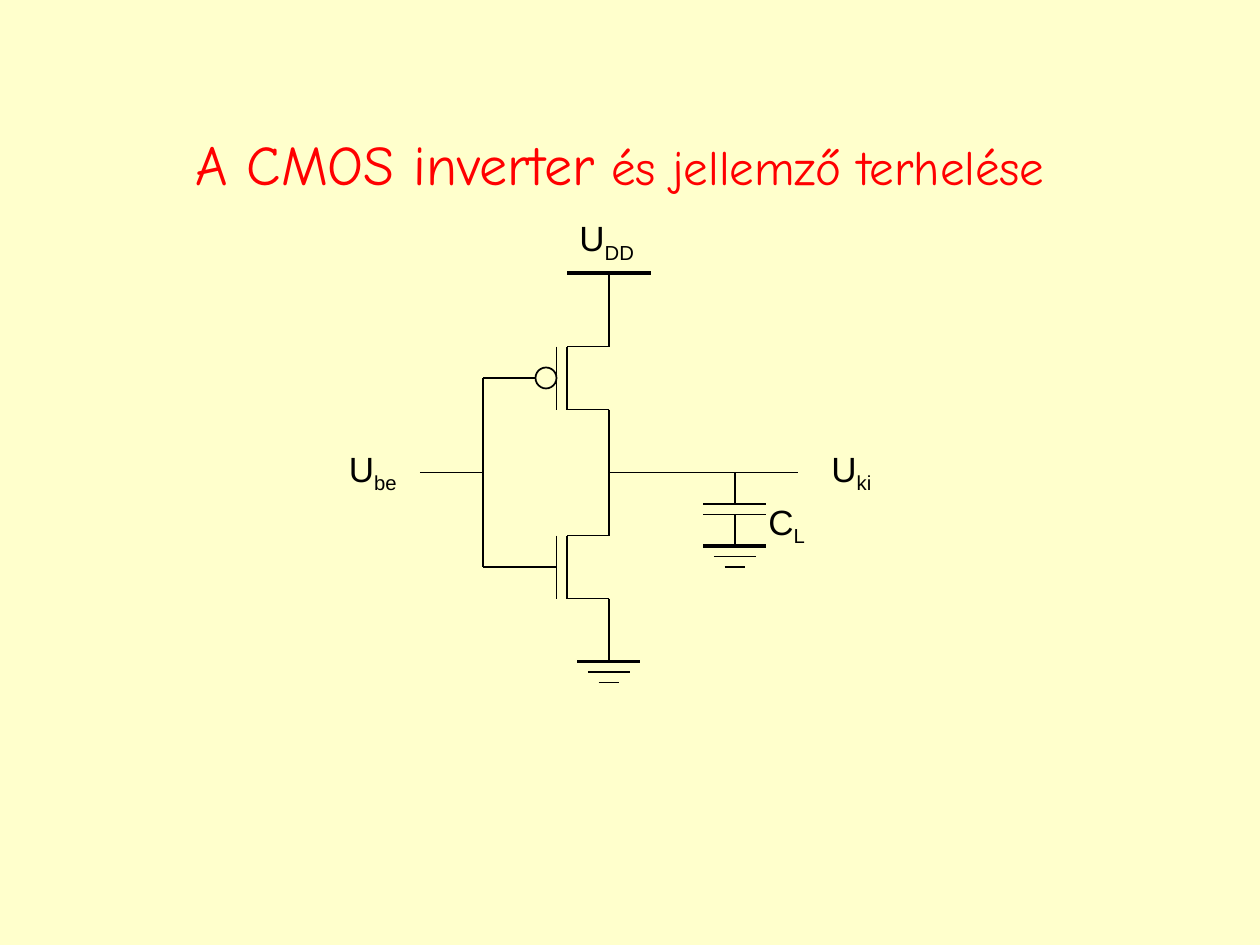
from dataclasses import dataclass

from lxml import etree
from pptx import Presentation
from pptx import util as u
from pptx.dml.color import RGBColor
from pptx.enum import shapes, text
from pptx.oxml.ns import qn


@dataclass(frozen=True)
class Theme:
    background: RGBColor = RGBColor(0xFF, 0xFF, 0xCC)
    heading: RGBColor = RGBColor(0xFF, 0, 0)
    ink: RGBColor = RGBColor(0, 0, 0)
    heading_font: str = "Comic Neue"
    label_font: str = "Arial"
    heading_size: int = 32
    subheading_size: int = 28
    label_size: int = 20
    wire: float = 1
    rail: float = 2.25


@dataclass(frozen=True)
class Label:
    symbol: str
    index: str
    left: float
    top: float
    width: float


@dataclass(frozen=True)
class Wire:
    """Straight line between two points, in twelfths of an inch."""
    x1: float
    y1: float
    x2: float
    y2: float
    weight: float = Theme.wire


THEME = Theme()
CHANNEL_X, DRAIN_X = 54, 58
INPUT_X, LOAD_X = 46, 70
PMOS_Y, NMOS_Y, MIDDLE_Y = 36, 54, 45
SUPPLY_Y, GROUND_Y = 26, 63

LABELS = [
    Label("U", "DD", 4.5, 1.67, 0.66),
    Label("U", "ki", 6.5, 3.5, 0.53),
    Label("C", "L", 6, 3.92, 0.5),
    Label("U", "be", 2.67, 3.5, 0.6),
]


def grid(steps: float) -> u.Length:
    return u.Inches(steps / 12)


def bar(x: float, y: float, half: float, weight: float = THEME.wire) -> Wire:
    return Wire(x - half, y, x + half, y, weight)


def ground(x: float, y: float) -> list[Wire]:
    return [bar(x, y, 3, THEME.rail), bar(x, y + 1, 2), bar(x, y + 2, 1)]


def transistor(y: float) -> list[Wire]:
    top, bottom = y - 3, y + 3
    return [
        Wire(CHANNEL_X, top, DRAIN_X, top),
        Wire(CHANNEL_X, bottom, DRAIN_X, bottom),
        Wire(CHANNEL_X, top, CHANNEL_X, bottom),
        Wire(CHANNEL_X - 1, top, CHANNEL_X - 1, bottom),
    ]


def draw_wire(circuit, wire: Wire) -> None:
    line = circuit.shapes.add_connector(
        shapes.MSO_CONNECTOR.STRAIGHT,
        grid(wire.x1), grid(wire.y1), grid(wire.x2), grid(wire.y2))
    line.line.color.rgb = THEME.ink
    line.line.width = u.Pt(wire.weight)
    etree.SubElement(line._element.spPr, qn("a:effectLst"))


def draw_label(circuit, label: Label) -> None:
    box = circuit.shapes.add_textbox(
        u.Inches(label.left), u.Inches(label.top),
        u.Inches(label.width), u.Inches(0.43))
    frame = box.text_frame
    frame.word_wrap = False
    frame.auto_size = text.MSO_AUTO_SIZE.SHAPE_TO_FIT_TEXT
    paragraph = frame.paragraphs[0]
    paragraph.font.name = THEME.label_font
    paragraph.font.size = u.Pt(THEME.label_size)
    paragraph.font.color.rgb = THEME.ink
    paragraph.add_run().text = label.symbol
    index = paragraph.add_run()
    index.text = label.index
    index._r.get_or_add_rPr().set("baseline", "-25000")


def draw_inversion_bubble(circuit) -> None:
    bubble = circuit.shapes.add_shape(
        shapes.MSO_SHAPE.OVAL, grid(51), grid(PMOS_Y - 1), grid(2), grid(2))
    bubble.shadow.inherit = False
    bubble.fill.background()
    bubble.line.color.rgb = THEME.ink
    bubble.line.width = u.Pt(THEME.wire)


def draw_title(slide) -> None:
    title = slide.shapes.title
    title.left, title.top = u.Inches(0.75), u.Inches(0.67)
    title.width, title.height = u.Inches(8.34), u.Inches(1.25)
    title.text_frame.vertical_anchor = text.MSO_ANCHOR.MIDDLE
    heading = title.text_frame.paragraphs[0]
    heading.alignment = text.PP_ALIGN.CENTER
    heading.font.name = THEME.heading_font
    heading.font.color.rgb = THEME.heading
    for words, size in [("A CMOS inverter", THEME.heading_size),
                        (" és jellemző terhelése", THEME.subheading_size)]:
        run = heading.add_run()
        run.text = words
        run.font.size = u.Pt(size)


def main() -> None:
    deck = Presentation()
    deck.slide_width, deck.slide_height = u.Inches(10), u.Inches(7.5)
    slide = deck.slides.add_slide(deck.slide_layouts[5])
    slide.background.fill.solid()
    slide.background.fill.fore_color.rgb = THEME.background
    draw_title(slide)

    wires = [
        # Supply rail, output branch and ground
        Wire(CHANNEL_X, SUPPLY_Y, 62, SUPPLY_Y, THEME.rail),
        Wire(DRAIN_X, SUPPLY_Y, DRAIN_X, PMOS_Y - 3),
        Wire(DRAIN_X, PMOS_Y + 3, DRAIN_X, NMOS_Y - 3),
        Wire(DRAIN_X, NMOS_Y + 3, DRAIN_X, GROUND_Y),
        *ground(DRAIN_X, GROUND_Y),
        Wire(DRAIN_X, MIDDLE_Y, 76, MIDDLE_Y),
        # Load capacitor
        Wire(LOAD_X, MIDDLE_Y, LOAD_X, 48),
        bar(LOAD_X, 48, 3),
        bar(LOAD_X, 49, 3),
        Wire(LOAD_X, 49, LOAD_X, 52),
        *ground(LOAD_X, 52),
        # Transistors
        *transistor(PMOS_Y),
        *transistor(NMOS_Y),
        # Input and gates
        Wire(INPUT_X, NMOS_Y, CHANNEL_X - 1, NMOS_Y),
        Wire(INPUT_X, PMOS_Y, 51, PMOS_Y),
        Wire(INPUT_X, PMOS_Y, INPUT_X, NMOS_Y),
        Wire(40, MIDDLE_Y, INPUT_X, MIDDLE_Y),
    ]
    circuit = slide.shapes.add_group_shape()
    for wire in wires:
        draw_wire(circuit, wire)
    draw_inversion_bubble(circuit)
    for label in LABELS:
        draw_label(circuit, label)

    deck.save("out.pptx")


if __name__ == "__main__":
    main()
